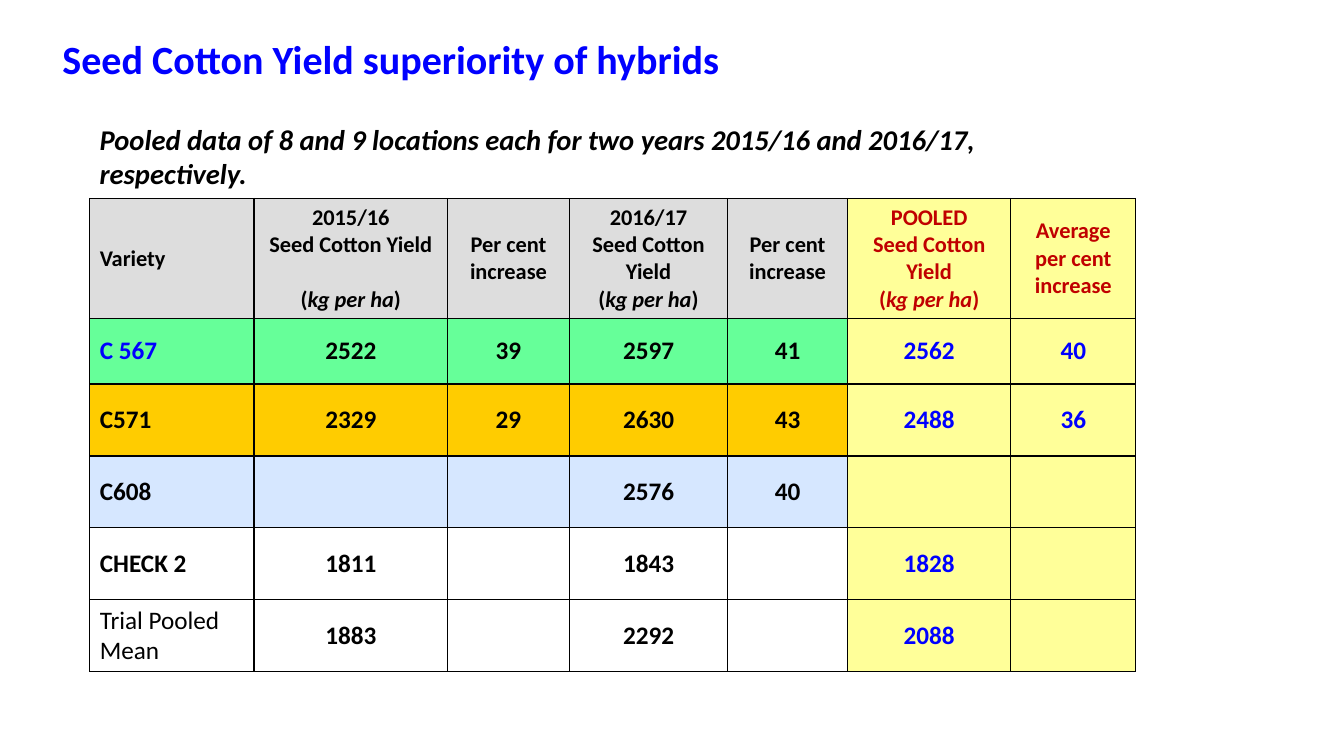
from lxml import etree
from pptx import Presentation
from pptx.dml.color import RGBColor
from pptx.enum.text import MSO_ANCHOR, PP_ALIGN
from pptx.oxml.ns import qn
from pptx.util import Pt

MIDDLE = MSO_ANCHOR.MIDDLE
LEFT, CENTER = PP_ALIGN.LEFT, PP_ALIGN.CENTER

FONT = "Calibri"
BLACK = RGBColor(0x00, 0x00, 0x00)
BLUE = RGBColor(0x00, 0x00, 0xFF)
RED = RGBColor(0xC0, 0x00, 0x00)
GRAY = RGBColor(0xDD, 0xDD, 0xDD)
YELLOW = RGBColor(0xFF, 0xFF, 0x99)
GREEN = RGBColor(0x66, 0xFF, 0x99)
GOLD = RGBColor(0xFF, 0xCC, 0x00)
PALE_BLUE = RGBColor(0xD6, 0xE7, 0xFF)

FIRST_POOLED_COLUMN = 5
COLUMN_WIDTHS = [117.4, 138.2, 87.1, 113, 85.7, 116.6, 89.3]
ROW_HEIGHTS = [85.7, 46.8, 51.4, 51.4, 51.4, 51.4]
UNIT = "(kg per ha)"
YIELD = "Seed Cotton Yield"
HEADERS = [
    ["Variety"],
    ["2015/16", YIELD, UNIT],
    ["Per cent increase"],
    ["2016/17", YIELD, UNIT],
    ["Per cent increase"],
    ["POOLED", YIELD, UNIT],
    ["Average", "per cent increase"],
]
VARIETIES = [
    (GREEN, ["C 567", "2522", "39", "2597", "41", "2562", "40"]),
    (GOLD, ["C571", "2329", "29", "2630", "43", "2488", "36"]),
    (PALE_BLUE, ["C608", "", "", "2576", "40", "", ""]),
    (None, ["CHECK 2", "1811", "", "1843", "", "1828", ""]),
    (None, ["Trial Pooled Mean", "1883", "", "2292", "", "2088", ""]),
]


def add_text(paragraph, text, size=18, color=BLACK, bold=True, italic=False, align=LEFT):
    """Append a formatted run to a paragraph."""
    paragraph.alignment = align
    run = paragraph.add_run()
    run.text = text
    run.font.name = FONT
    run.font.size = Pt(size)
    run.font.bold = bold
    run.font.italic = italic
    run.font.color.rgb = color


def format_cell(cell, fill):
    """Give a cell black borders, a fill and middle anchoring."""
    properties = cell._tc.get_or_add_tcPr()
    for side in ("lnL", "lnR", "lnT", "lnB"):
        line = etree.SubElement(properties, qn(f"a:{side}"), w=str(Pt(1)))
        solid = etree.SubElement(line, qn("a:solidFill"))
        etree.SubElement(solid, qn("a:srgbClr"), val=str(BLACK))
    if fill is None:
        cell.fill.background()
    else:
        cell.fill.solid()
        cell.fill.fore_color.rgb = fill
    cell.vertical_anchor = MIDDLE


def fill_header(cell, lines, column):
    """Write the lines of one column heading."""
    pooled = column >= FIRST_POOLED_COLUMN
    format_cell(cell, YELLOW if pooled else GRAY)
    style = {"size": 16, "color": RED if pooled else BLACK,
             "align": CENTER if column else LEFT}
    for index, line in enumerate(lines):
        frame = cell.text_frame
        paragraph = frame.add_paragraph() if index else frame.paragraphs[0]
        if line == UNIT:
            add_text(paragraph, "(", **style)
            add_text(paragraph, UNIT.strip("()"), italic=True, **style)
            add_text(paragraph, ")", **style)
            if column == 1:
                paragraph.space_before = Pt(19.5)
        else:
            add_text(paragraph, line, **style)


def fill_value(cell, text, row_fill, column):
    """Write one body cell of the table."""
    pooled = column >= FIRST_POOLED_COLUMN
    format_cell(cell, YELLOW if pooled else row_fill)
    if text:
        add_text(cell.text_frame.paragraphs[0], text,
                 color=BLUE if pooled or text == "C 567" else BLACK,
                 bold=text != "Trial Pooled Mean",
                 align=CENTER if column else LEFT)


def add_title(slide, left, top, width, height):
    """Place the slide title in its placeholder."""
    shape = slide.shapes.title
    shape.left, shape.top = Pt(left), Pt(top)
    shape.width, shape.height = Pt(width), Pt(height)
    frame = shape.text_frame
    frame.word_wrap = False
    frame.vertical_anchor = MIDDLE
    add_text(frame.paragraphs[0], "Seed Cotton Yield superiority of hybrids",
             size=28.6, color=BLUE)


def add_subtitle(slide, left, top, width, height):
    """Place the note on the pooled data above the table."""
    shape = slide.shapes.add_textbox(Pt(left), Pt(top), Pt(width), Pt(height))
    frame = shape.text_frame
    frame.word_wrap = True
    add_text(frame.paragraphs[0],
             "Pooled data of 8 and 9 locations each for two years 2015/16 and 2016/17,",
             size=20.4, italic=True)
    add_text(frame.add_paragraph(), "respectively.", size=20.4, italic=True)


def add_yield_table(slide, left, top):
    """Build the yield table from its headings and varieties."""
    table = slide.shapes.add_table(
        len(ROW_HEIGHTS), len(COLUMN_WIDTHS), Pt(left), Pt(top),
        Pt(sum(COLUMN_WIDTHS)), Pt(sum(ROW_HEIGHTS))).table
    table.first_row = False
    table.horz_banding = False
    for column, width in zip(table.columns, COLUMN_WIDTHS):
        column.width = Pt(width)
    for row, height in zip(table.rows, ROW_HEIGHTS):
        row.height = Pt(height)
    for column, lines in enumerate(HEADERS):
        fill_header(table.cell(0, column), lines, column)
    for row, (row_fill, values) in enumerate(VARIETIES, start=1):
        for column, text in enumerate(values):
            fill_value(table.cell(row, column), text, row_fill, column)


def main():
    """Build and save the presentation."""
    presentation = Presentation()
    presentation.slide_width, presentation.slide_height = Pt(960), Pt(540)
    slide = presentation.slides.add_slide(
        presentation.slide_layouts.get_by_name("Title Only"))
    add_title(slide, 37.4, 20.9, 492.5, 41.8)
    add_yield_table(slide, 64.1, 141.8)
    add_subtitle(slide, 64.1, 83.5, 748.1, 57.6)
    presentation.save("out.pptx")


if __name__ == "__main__":
    main()
